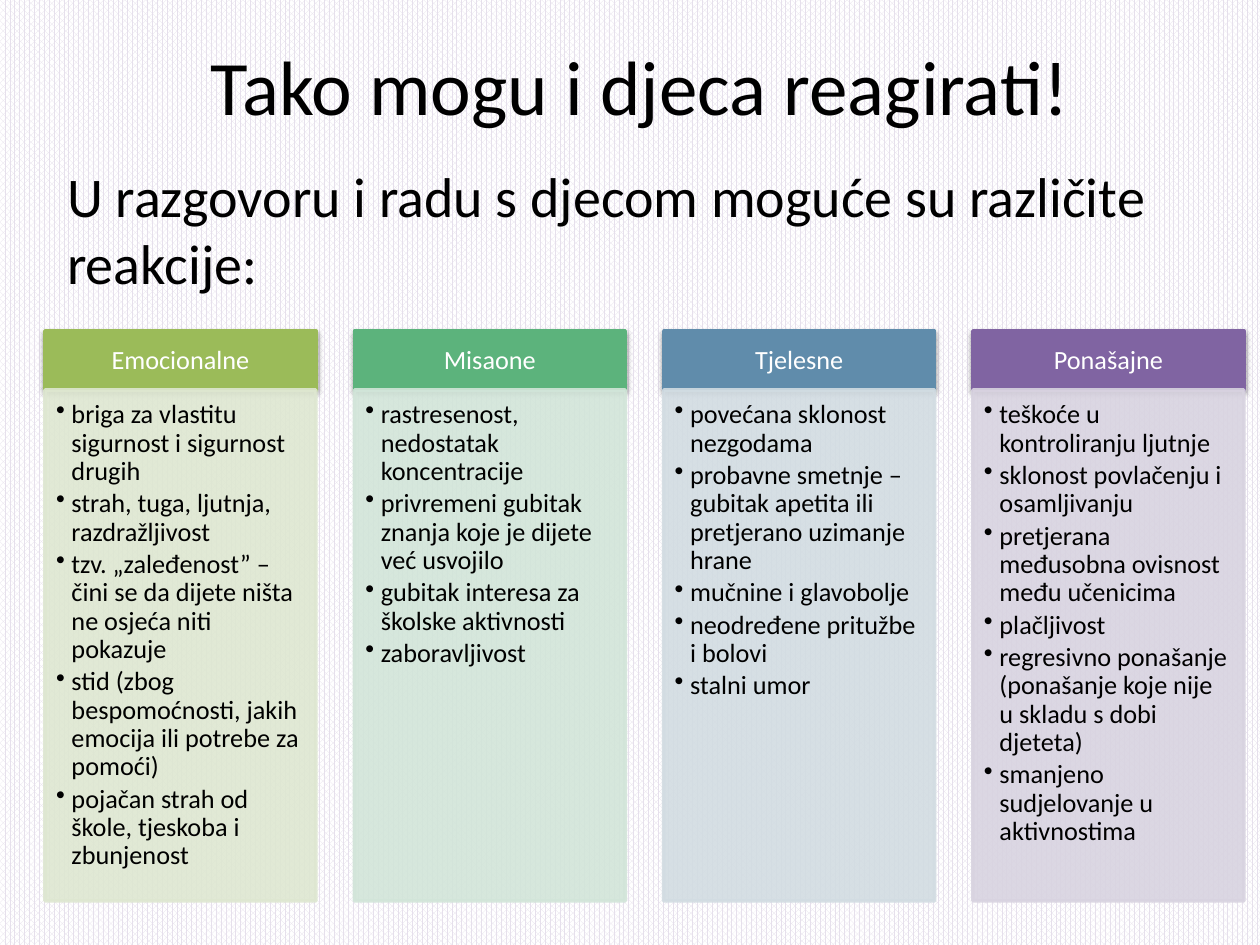
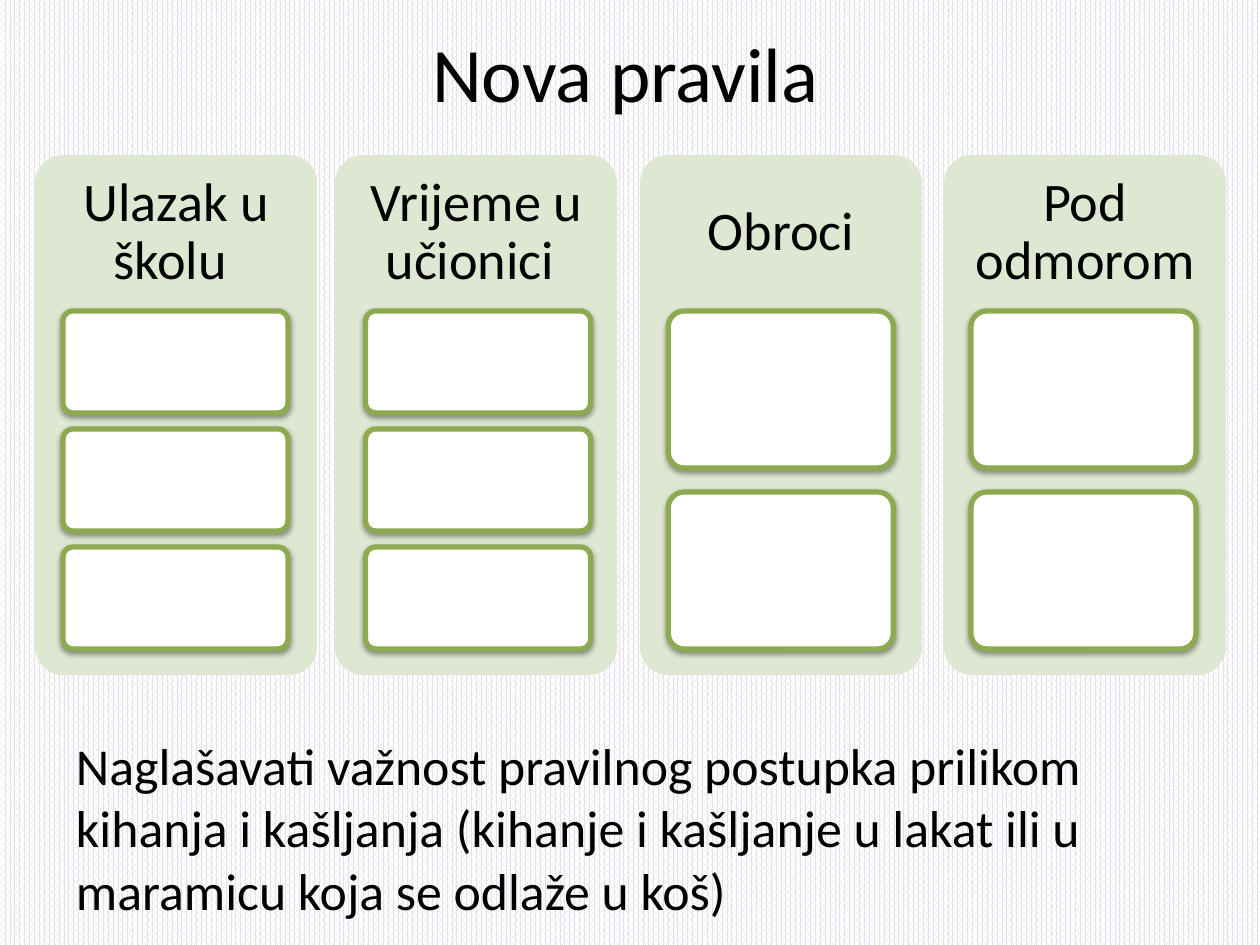
from dataclasses import dataclass

from lxml import etree
from pptx import Presentation
from pptx import util as u
from pptx.dml.color import RGBColor
from pptx.enum import dml, shapes, text
from pptx.oxml.ns import qn


@dataclass
class Theme:
    """Colours, font and type sizes of the deck."""
    font: str = "Calibri"
    ink: str = "000000"
    white: str = "FFFFFF"
    weave: str = "E6E0EC"
    panel: str = "DEE7D1"
    edge: str = "8DAA51"
    title: float = 44
    lead: float = 32
    note: float = 29.6
    name: float = 31
    small: float = 15


T = Theme()
SCALE = 914400 / 126
RECT, ROUND = shapes.MSO_SHAPE.RECTANGLE, shapes.MSO_SHAPE.ROUNDED_RECTANGLE
TOP, MID = text.MSO_ANCHOR.TOP, text.MSO_ANCHOR.MIDDLE
LEFT, MIDST = text.PP_ALIGN.LEFT, text.PP_ALIGN.CENTER
SIDES = ("left", "top", "width", "height")


def box(slide, at, fill=None, line=None, kind=RECT, thick=2, alpha=None, shade=False):
    """Add a preset shape placed in pixels, with fill, line and soft shadow."""
    part = slide.shapes.add_shape(kind, *[round(n * SCALE) for n in at])
    part.shadow.inherit = False
    if kind == ROUND:
        part.adjustments[0] = 0.1
    for paint, tone in ((part.fill, fill), (part.line.fill, line)):
        if tone:
            paint.solid()
            paint.fore_color.rgb = RGBColor.from_string(tone)
        else:
            paint.background()
    if line:
        part.line.width = u.Pt(thick)
    props = part._element.spPr
    if alpha:
        for tone in props.iter(qn("a:srgbClr")):
            etree.SubElement(tone, qn("a:alpha"), val=str(alpha * 1000))
    if shade:
        cast = etree.SubElement(
            props.find(qn("a:effectLst")), qn("a:outerShdw"), blurRad=str(u.Pt(3.1)),
            dist=str(u.Pt(1.6)), dir="5400000", rotWithShape="0")
        tone = etree.SubElement(cast, qn("a:srgbClr"), val=T.ink)
        etree.SubElement(tone, qn("a:alpha"), val="38000")
    return part


def write(part, lines, size, ink=T.ink, pad=(13, 6, 13, 6), anchor=TOP, bullet=False, **form):
    """Fill a shape with paragraphs; form holds paragraph attributes."""
    frame = part.text_frame
    frame.word_wrap = True
    frame.vertical_anchor = anchor
    for side, gap in zip(("left", "top", "right", "bottom"), pad):
        setattr(frame, "margin_" + side, round(gap * SCALE))
    for i, words in enumerate(lines):
        para = frame.add_paragraph() if i else frame.paragraphs[0]
        for key, val in form.items():
            setattr(para, key, val)
        run = para.add_run()
        run.text = words
        run.font.name, run.font.size = T.font, u.Pt(size)
        run.font.color.rgb = RGBColor.from_string(ink)
        if bullet:
            props = para._p.get_or_add_pPr()
            dent = round(15.5 * SCALE)
            props.set("marL", str(dent))
            props.set("indent", str(-dent))
            etree.SubElement(props, qn("a:buChar"), char="•")


deck = Presentation()
deck.slide_width, deck.slide_height = u.Inches(10), u.Inches(7.5)

# Woven background, shared through the master
weave = deck.slide_master.background.fill
weave.patterned()
weave.pattern = dml.MSO_PATTERN.PERCENT_75
weave.fore_color.rgb = RGBColor.from_string(T.weave)
weave.back_color.rgb = RGBColor.from_string(T.white)

# Slides with their titles and running text
pages = [
    ("Tako mogu i djeca reagirati!", (74, 26, 1132, 118),
     "U razgovoru i radu s djecom moguće su različite reakcije:",
     (54, 155, 1191, 159), T.lead),
    ("Nova pravila", (64, 3, 1123, 137),
     "Naglašavati važnost pravilnog postupka prilikom kihanja i kašljanja "
     "(kihanje i kašljanje u lakat ili u maramicu koja se odlaže u koš)",
     (63, 728, 1134, 198), T.note),
]
slides = []
for title, spot, lead, at, size in pages:
    slide = deck.slides.add_slide(deck.slide_layouts[5])
    head = slide.shapes.title
    for side, n in zip(SIDES, spot):
        setattr(head, side, round(n * SCALE))
    write(head, [title], T.title, anchor=MID, alignment=MIDST)
    write(box(slide, at), [lead], size, alignment=LEFT)
    slides.append(slide)

# Slide 1: four kinds of reaction
kinds = [
    ("Emocionalne", "9BBB59", "DEE7D1", [
        "briga za vlastitu sigurnost i sigurnost drugih",
        "strah, tuga, ljutnja, razdražljivost",
        "tzv. „zaleđenost” – čini se da dijete ništa ne osjeća niti pokazuje",
        "stid (zbog bespomoćnosti, jakih emocija ili potrebe za pomoći)",
        "pojačan strah od škole, tjeskoba i zbunjenost"]),
    ("Misaone", "5CB37C", "D2E5D9", [
        "rastresenost, nedostatak koncentracije",
        "privremeni gubitak znanja koje je dijete već usvojilo",
        "gubitak interesa za školske aktivnosti",
        "zaboravljivost"]),
    ("Tjelesne", "608CAB", "D2DCE2", [
        "povećana sklonost nezgodama",
        "probavne smetnje – gubitak apetita ili pretjerano uzimanje hrane",
        "mučnine i glavobolje",
        "neodređene pritužbe i bolovi",
        "stalni umor"]),
    ("Ponašajne", "8064A2", "D8D3E0", [
        "teškoće u kontroliranju ljutnje",
        "sklonost povlačenju i osamljivanju",
        "pretjerana međusobna ovisnost među učenicima",
        "plačljivost",
        "regresivno ponašanje (ponašanje koje nije u skladu s dobi djeteta)",
        "smanjeno sudjelovanje u aktivnostima"]),
]
for i, (name, dark, pale, points) in enumerate(kinds):
    x = 45 + 309.33 * i
    head = box(slides[0], (x, 331, 271, 59), dark, dark, shade=True)
    write(head, [name], T.small, T.white, (15, 9, 15, 9), MID,
          alignment=MIDST, line_spacing=0.9)
    body = box(slides[0], (x, 390, 271, 511), pale, pale, alpha=90)
    write(body, points, T.small, pad=(11, 11, 15, 16), bullet=True,
          alignment=LEFT, line_spacing=0.9, space_after=u.Pt(2.25))

# Slide 2: four panels, each with a stack of blank cards
rules = [("Ulazak u školu ", 35, 3), ("Vrijeme u učionici ", 335, 3),
         ("Obroci", 640, 2), ("Pod odmorom", 944, 2)]
gaps = {2: 24, 3: 16}
for i, (name, x, count) in enumerate(rules):
    box(slides[1], (x, 155, 282, 520), T.panel, kind=ROUND)
    write(box(slides[1], (x, 155, 282, 156)), [name], T.name, pad=(16,) * 4,
          anchor=MID, alignment=MIDST, line_spacing=0.9)
    gap = gaps[count]
    tall = (338 - gap * (count - 1)) / count
    for j in range(count):
        box(slides[1], (63 + 302.67 * i, 311 + j * (tall + gap), 225, tall),
            T.white, T.edge, ROUND, thick=3, shade=True)

deck.save("out.pptx")
